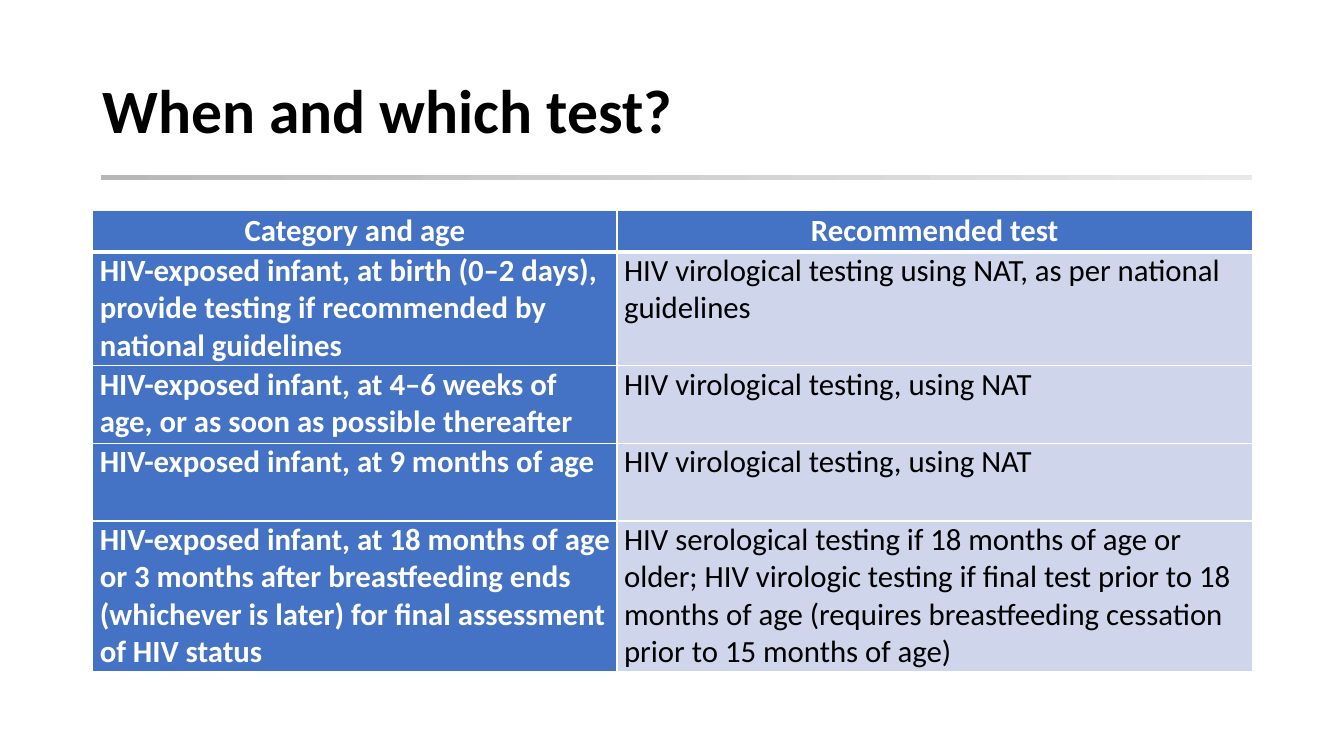
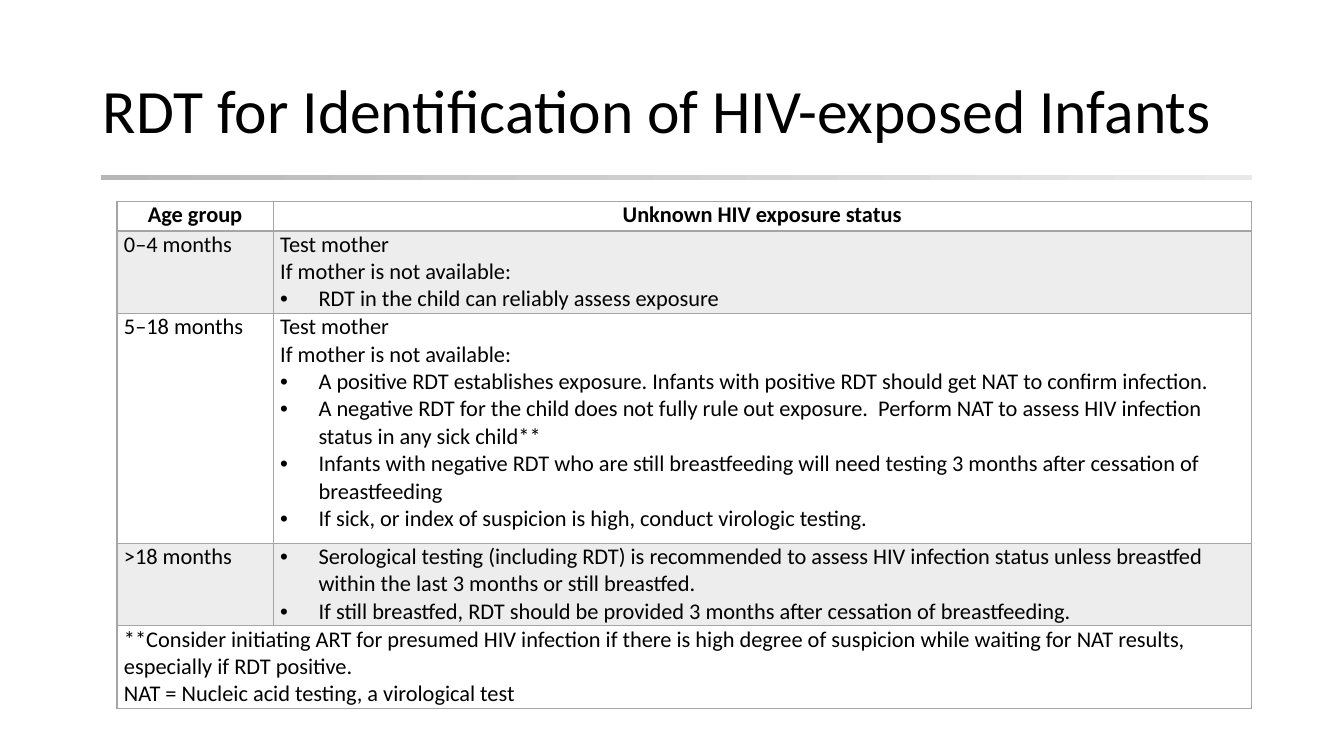
from lxml import etree
from pptx import Presentation
from pptx.dml.color import RGBColor
from pptx.enum.shapes import MSO_SHAPE
from pptx.enum.text import MSO_ANCHOR, PP_ALIGN
from pptx.oxml.ns import qn
from pptx.util import Inches, Pt

RECTANGLE = MSO_SHAPE.RECTANGLE
LEFT, CENTER = PP_ALIGN.LEFT, PP_ALIGN.CENTER
TOP, MIDDLE = MSO_ANCHOR.TOP, MSO_ANCHOR.MIDDLE

FONT = "Calibri"
BLACK = RGBColor(0x00, 0x00, 0x00)
WHITE = RGBColor(0xFF, 0xFF, 0xFF)
BLUE = RGBColor(0x44, 0x72, 0xC4)
PALE_BLUE = RGBColor(0xCF, 0xD5, 0xEA)
GREY = RGBColor(0xA5, 0xA5, 0xA5)
PALE_GREY = RGBColor(0xED, 0xED, 0xED)
RULE_START = RGBColor(0xB7, 0xB7, 0xB7)
RULE_END = RGBColor(0xE9, 0xE9, 0xE9)
BULLET_INDENT = Inches(0.38)


def write(frame, lines, size, color=BLACK, bold=False, align=LEFT,
          spacing=1.0, bullets_from=None):
    """Write one paragraph per line, bulleted from the given line onward."""
    frame.word_wrap = True
    for index, line in enumerate(lines):
        para = frame.paragraphs[0] if index == 0 else frame.add_paragraph()
        para.alignment = align
        para.line_spacing = spacing
        span = para.add_run()
        span.text = line
        span.font.name = FONT
        span.font.size = Pt(size)
        span.font.bold = bold
        span.font.color.rgb = color
        if bullets_from is not None and index >= bullets_from:
            props = para._p.get_or_add_pPr()
            props.set("marL", str(BULLET_INDENT))
            props.set("indent", str(-BULLET_INDENT))
            etree.SubElement(props, qn("a:buFont"), typeface="Arial")
            etree.SubElement(props, qn("a:buChar"), char="•")


def style_cell(cell, fill, border, top, bottom, anchor):
    """Set margins, border lines (widths in points) and fill."""
    cell.margin_left = cell.margin_right = Inches(0.07)
    cell.margin_top = cell.margin_bottom = 0
    cell.vertical_anchor = anchor
    props = cell._tc.get_or_add_tcPr()
    for side, width in (("L", 1), ("R", 1), ("T", top), ("B", bottom)):
        line = etree.SubElement(props, qn(f"a:ln{side}"), w=str(Pt(width)))
        solid = etree.SubElement(line, qn("a:solidFill"))
        etree.SubElement(solid, qn("a:srgbClr"), val=str(border))
    if fill is None:
        cell.fill.background()
    else:
        cell.fill.solid()
        cell.fill.fore_color.rgb = fill


# Each body cell is (lines, index of the first bulleted line or None).
MOTHER_FIRST = ["Test mother", "If mother is not available:"]

test_rows = [
    ("HIV-exposed infant, at birth (0–2 days), provide testing if "
     "recommended by national guidelines",
     "HIV virological testing using NAT, as per national guidelines"),
    ("HIV-exposed infant, at 4–6 weeks of age, or as soon as possible thereafter",
     "HIV virological testing, using NAT"),
    ("HIV-exposed infant, at 9 months of age",
     "HIV virological testing, using NAT"),
    ("HIV-exposed infant, at 18 months of age or 3 months after breastfeeding "
     "ends (whichever is later) for final assessment of HIV status",
     "HIV serological testing if 18 months of age or older; HIV virologic "
     "testing if final test prior to 18 months of age (requires breastfeeding "
     "cessation prior to 15 months of age)"),
]

age_rows = [
    [(["0–4 months"], None),
     (MOTHER_FIRST + ["RDT in the child can reliably assess exposure"], 2)],
    [(["5–18 months"], None),
     (MOTHER_FIRST + [
         "A positive RDT establishes exposure. Infants with positive RDT "
         "should get NAT to confirm infection.",
         "A negative RDT for the child does not fully rule out exposure.  "
         "Perform NAT to assess HIV infection status in any sick child**",
         "Infants with negative RDT who are still breastfeeding will need "
         "testing 3 months after cessation of breastfeeding",
         "If sick, or index of suspicion is high, conduct virologic testing.",
     ], 2)],
    [([">18 months"], None),
     (["Serological testing (including RDT) is recommended to assess HIV "
       "infection status unless breastfed within the last 3 months or still "
       "breastfed.",
       "If still breastfed, RDT should be provided 3 months after cessation "
       "of breastfeeding."], 0)],
    [(["**Consider initiating ART for presumed HIV infection if there is high "
       "degree of suspicion while waiting for NAT results, especially if RDT "
       "positive.",
       "NAT = Nucleic acid testing, a virological test"], None)],
]

slides = [
    dict(title="When and which test?", title_bold=True,
         left=0.92, top=2.09, columns=[5.2, 6.3],
         heights=[0.41, 1.13, 0.77, 0.77, 1.49],
         headers=["Category and age", "Recommended test"],
         rows=[[([text], None) for text in row] for row in test_rows],
         size=22, border=WHITE, header_line=3, header_anchor=MIDDLE,
         header_fill=BLUE, header_color=WHITE,
         fills=[[BLUE, PALE_BLUE]], first_color=WHITE, first_bold=True),
    dict(title="RDT for Identification of HIV-exposed Infants", title_bold=False,
         left=1.16, top=2, columns=[1.55, 9.7],
         heights=[0.29, 0.82, 2.28, 0.82, 0.82],
         headers=["Age group", "Unknown HIV exposure status"],
         rows=age_rows,
         size=16, border=GREY, header_line=2, header_anchor=TOP,
         header_fill=None, header_color=BLACK,
         fills=[[PALE_GREY, PALE_GREY], [None, None]],
         first_color=BLACK, first_bold=False),
]

deck = Presentation()
deck.slide_width, deck.slide_height = Inches(13.33), Inches(7.5)

for content in slides:
    page = deck.slides.add_slide(deck.slide_layouts[6])

    rule = page.shapes.add_shape(
        RECTANGLE, Inches(1), Inches(1.74), Inches(11.42), Inches(0.05))
    rule.shadow.inherit = False
    rule.line.fill.background()
    rule.fill.gradient()
    rule.fill.gradient_angle = 0
    for stop, color in zip(rule.fill.gradient_stops, (RULE_START, RULE_END)):
        stop.color.rgb = color

    title = page.shapes.add_textbox(
        Inches(0.92), Inches(0.4), Inches(11.5), Inches(1.45))
    title.text_frame.vertical_anchor = MIDDLE
    write(title.text_frame, [content["title"]], 44,
          bold=content["title_bold"], spacing=0.9)

    columns, heights = content["columns"], content["heights"]
    table = page.shapes.add_table(
        len(heights), len(columns), Inches(content["left"]),
        Inches(content["top"]), Inches(sum(columns)), Inches(sum(heights))).table
    for column, width in zip(table.columns, columns):
        column.width = Inches(width)
    for row, height in zip(table.rows, heights):
        row.height = Inches(height)

    border, header_line = content["border"], content["header_line"]
    for index, text in enumerate(content["headers"]):
        cell = table.cell(0, index)
        style_cell(cell, content["header_fill"], border, 1, header_line,
                   content["header_anchor"])
        write(cell.text_frame, [text], content["size"],
              color=content["header_color"], bold=True, align=CENTER)

    for number, row in enumerate(content["rows"], start=1):
        fills = content["fills"][(number - 1) % len(content["fills"])]
        for index, fill in enumerate(fills):
            style_cell(table.cell(number, index), fill, border,
                       header_line if number == 1 else 1, 1, TOP)
        if len(row) < len(columns):
            table.cell(number, 0).merge(table.cell(number, len(columns) - 1))
        for index, (lines, bullets_from) in enumerate(row):
            first = index == 0
            write(table.cell(number, index).text_frame, lines, content["size"],
                  color=content["first_color"] if first else BLACK,
                  bold=first and content["first_bold"],
                  bullets_from=bullets_from)

deck.save("out.pptx")
